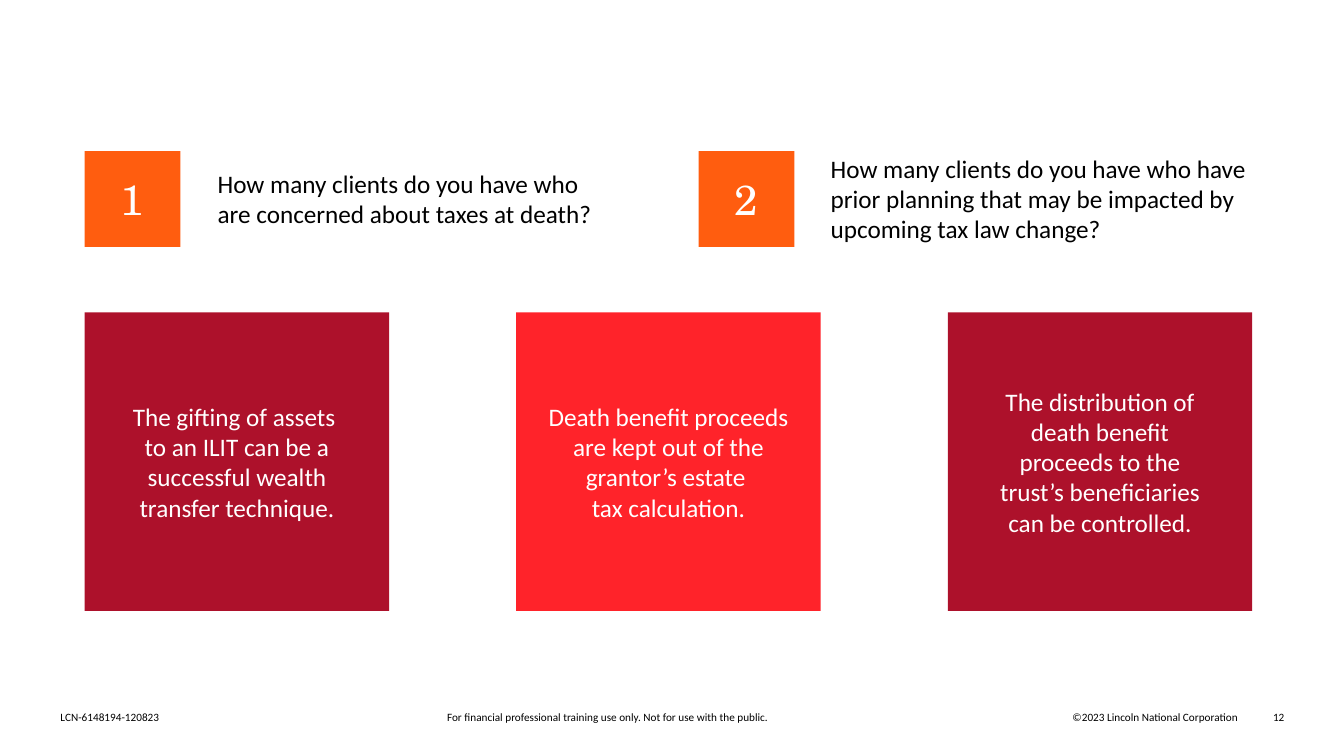
from pptx import Presentation
from pptx.dml.color import RGBColor
from pptx.enum import shapes, text
from pptx.util import Inches, Pt

LEFT, CENTER, RIGHT = text.PP_ALIGN.LEFT, text.PP_ALIGN.CENTER, text.PP_ALIGN.RIGHT
TOP, MIDDLE, BOTTOM = text.MSO_ANCHOR.TOP, text.MSO_ANCHOR.MIDDLE, text.MSO_ANCHOR.BOTTOM
BODY, SERIF = "Calibri", "TeX Gyre Schola"
BLACK, WHITE, ORANGE, DARK, RED = "000000", "FFFFFF", "FF5D0F", "AD112B", "FF232A"

# number, left of badge, question, box of question
ASKS = [
    ("1", 0.84, "How many clients do you have who are concerned about taxes at death?",
     (2.06, 1.62, 4.08, 0.71)),
    ("2", 6.93, "How many clients do you have who have prior planning that may be "
     "impacted by upcoming tax law change?", (8.14, 1.47, 4.35, 1.01)),
]
# words, fill, side inset
CARDS = [
    ("The gifting of assets \vto an ILIT can be a successful wealth transfer technique.",
     DARK, 0.2),
    ("Death benefit proceeds are kept out of the grantor’s estate \vtax calculation.",
     RED, 0.2),
    ("The distribution of death benefit proceeds to the trust’s beneficiaries "
     "can be controlled.", DARK, 0.4),
]
# words, left, width, alignment
FOOT = [
    ("LCN-6148194-120823", 0.6, 1.87, LEFT),
    ("For financial professional training use only. Not for use with the public.",
     2.23, 7.6, CENTER),
    ("©2023 Lincoln National Corporation", 9.83, 2.45, RIGHT),
    ("12", 12.41, 0.33, RIGHT),
]
EDGE, STEP = 0.84, 4.28


def color(code):
    return RGBColor.from_string(code)


def write(shape, words, size, ink, align, anchor, inset, font=BODY, after=0):
    """Set and format the text; inset is (side, top and bottom)."""
    frame = shape.text_frame
    frame.word_wrap = True
    frame.vertical_anchor = anchor
    frame.margin_left = frame.margin_right = Inches(inset[0])
    frame.margin_top = frame.margin_bottom = Inches(inset[1])
    frame.text = words
    para = frame.paragraphs[0]
    para.alignment = align
    para.space_after = Pt(after)
    for run in para.runs:
        run.font.size = Pt(size)
        run.font.name = font
        run.font.color.rgb = color(ink)


def block(slide, box, fill):
    shape = slide.shapes.add_shape(shapes.MSO_SHAPE.RECTANGLE, *map(Inches, box))
    shape.shadow.inherit = False
    shape.fill.solid()
    shape.fill.fore_color.rgb = color(fill)
    shape.line.fill.background()
    return shape


def label(slide, box):
    return slide.shapes.add_textbox(*map(Inches, box))


def main():
    deck = Presentation()
    deck.slide_width, deck.slide_height = Inches(13.33), Inches(7.5)
    slide = deck.slides.add_slide(deck.slide_layouts[6])

    for words, left, width, align in FOOT:
        write(label(slide, (left, 7.05, width, 0.13)), words, 8, BLACK,
              align, BOTTOM, (0, 0))

    for num, left, words, box in ASKS:
        write(label(slide, box), words, 18, BLACK, LEFT, TOP, (0.1, 0.05), after=8)
        badge = block(slide, (left, 1.5, 0.95, 0.95), ORANGE)
        write(badge, num, 30, WHITE, CENTER, MIDDLE, (0, 0), font=SERIF)

    for i, (words, fill, side) in enumerate(CARDS):
        card = block(slide, (EDGE + i * STEP, 3.1, 3.02, 2.96), fill)
        write(card, words, 18, WHITE, CENTER, MIDDLE, (side, 0.05), after=8)

    deck.save("out.pptx")


if __name__ == "__main__":
    main()
